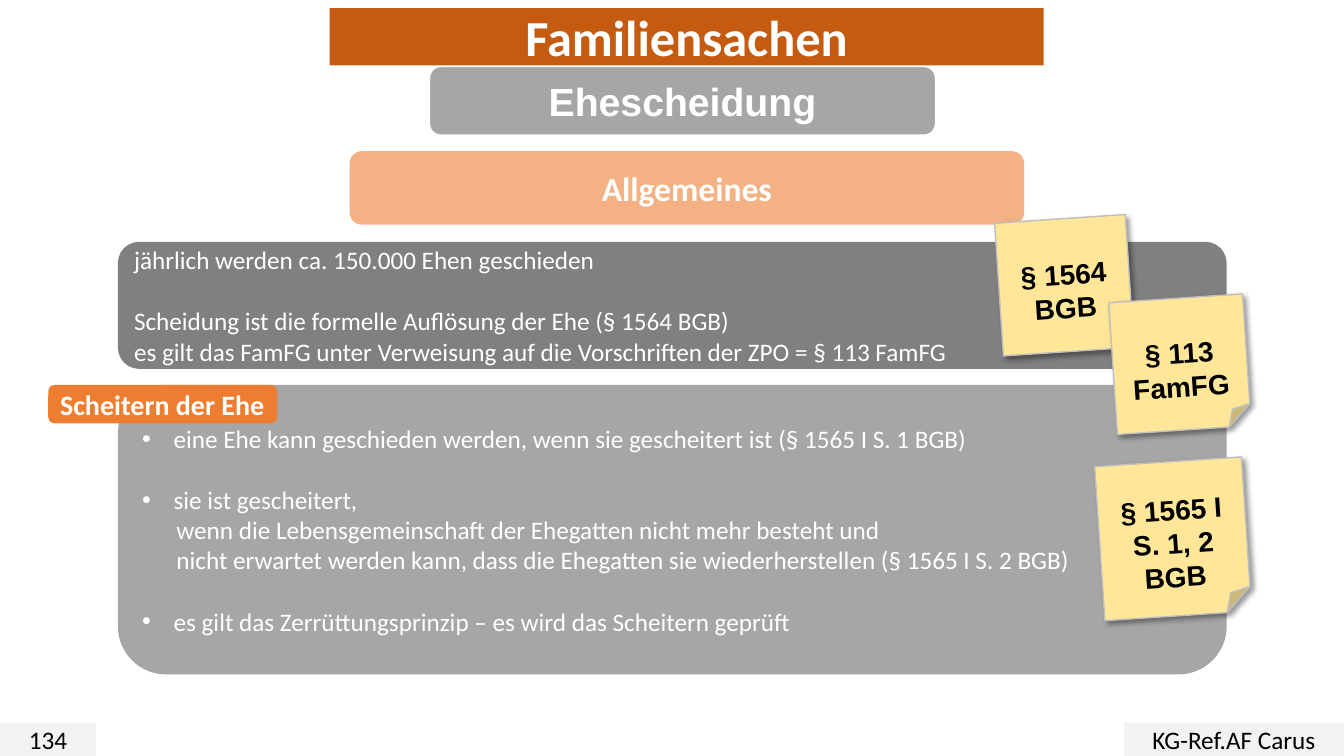
from pptx import Presentation
from pptx.dml.color import RGBColor
from pptx.enum.shapes import MSO_SHAPE
from pptx.enum.text import MSO_ANCHOR, MSO_AUTO_SIZE, PP_ALIGN
from pptx.oxml import parse_xml
from pptx.oxml.ns import nsdecls, qn
from pptx.util import Pt

# Content: places are left, top, width, height in points
TITLE = ("Familiensachen", (235.5, 5.75, 510, 41), "C55A11")
SUBTITLE = ("Ehescheidung", (306.75, 47.5, 361.5, 49), "A6A6A6")
TOPIC = ("Allgemeines", (249.75, 108, 481.75, 52.5), "F4B183")
TAG = ("Scheitern der Ehe", (34.5, 275, 163.5, 27.5), "ED7D31")
FOOTERS = [
    ("134", (0, 516.25, 68.5, 23.75)),
    ("KG-Ref.AF Carus", (802.75, 516.25, 157.25, 23.75)),
]

# Lines: text, kind, gap before
FACTS_PLACE = (84.25, 172.75, 792, 90.75)
FACTS = [
    ("jährlich werden ca. 150.000 Ehen geschieden", "plain", False),
    ("Scheidung ist die formelle Auflösung der Ehe (§ 1564 BGB)", "plain", True),
    ("es gilt das FamFG unter Verweisung auf die Vorschriften der ZPO = § 113 FamFG",
     "plain", False),
]
FAILURE_PLACE = (84.25, 275, 792, 206.75)
FAILURE = [
    ("eine Ehe kann geschieden werden, wenn sie gescheitert ist (§ 1565 I S. 1 BGB)",
     "bullet", False),
    ("sie ist gescheitert,", "bullet", True),
    ("wenn die Lebensgemeinschaft der Ehegatten nicht mehr besteht und",
     "follow", False),
    ("nicht erwartet werden kann, dass die Ehegatten sie wiederherstellen (§ 1565 I S. 2 BGB)",
     "follow", False),
    ("es gilt das Zerrüttungsprinzip – es wird das Scheitern geprüft", "bullet", True),
]
INDENTS = {"plain": (0, 0), "bullet": (22.5, -22.5), "follow": (24.5, 0)}

NOTES = [
    (["§ 1564", "BGB"], (713.5, 156.25, 93.5, 95)),
    (["§ 113", "FamFG"], (795, 213, 95.75, 94.25)),
    (["§ 1565 I S. 1, 2", "BGB"], (785.5, 329.75, 105, 110.25)),
]
NOTE_TURN = 356.2
WHITE, BLACK = "FFFFFF", "000000"
LINE_GAP = 22


def color(code):
    return RGBColor.from_string(code)


def place_box(box, place):
    box.left, box.top, box.width, box.height = [Pt(value) for value in place]


def dress(box, fill, line=None):
    box.fill.solid()
    box.fill.fore_color.rgb = color(fill)
    if line:
        box.line.color.rgb = color(line)
        box.line.width = Pt(1)
    else:
        box.line.fill.background()
    frame = box.text_frame
    frame.word_wrap = True
    frame.auto_size = MSO_AUTO_SIZE.NONE
    frame.vertical_anchor = MSO_ANCHOR.MIDDLE
    frame.margin_left = frame.margin_right = Pt(7.2)
    frame.margin_top = frame.margin_bottom = Pt(3.6)


def add_box(page, kind, place, fill, line=None):
    box = page.shapes.add_shape(kind, *[Pt(value) for value in place])
    box.shadow.inherit = False
    dress(box, fill, line)
    return box


def round_placeholder(box, place, fill):
    place_box(box, place)
    box.element.spPr.append(parse_xml(
        f'<a:prstGeom {nsdecls("a")} prst="roundRect"><a:avLst/></a:prstGeom>'))
    dress(box, fill)


def write(box, lines, size, ink=WHITE, font="Calibri", bold=False,
          align=PP_ALIGN.CENTER):
    frame = box.text_frame
    for number, line in enumerate(lines):
        para = frame.add_paragraph() if number else frame.paragraphs[0]
        para.alignment = align
        para.space_before = para.space_after = Pt(0)
        span = para.add_run()
        span.text = line
        span.font.name = font
        span.font.size = Pt(size)
        span.font.bold = bold
        span.font.color.rgb = color(ink)


def write_list(box, rows):
    write(box, [text for text, _, _ in rows], 18, align=PP_ALIGN.LEFT)
    for para, (_, kind, gap) in zip(box.text_frame.paragraphs, rows):
        para.space_before = Pt(LINE_GAP if gap else 0)
        margin, indent = INDENTS[kind]
        settings = para._p.get_or_add_pPr()
        settings.set("marL", str(Pt(margin)))
        settings.set("indent", str(Pt(indent)))
        if kind == "bullet":
            settings.append(parse_xml(f'<a:buFont {nsdecls("a")} typeface="Arial"/>'))
            settings.append(parse_xml(f'<a:buChar {nsdecls("a")} char="•"/>'))
        else:
            settings.append(parse_xml(f'<a:buNone {nsdecls("a")}/>'))


def add_note(page, lines, place):
    note = add_box(page, MSO_SHAPE.FOLDED_CORNER, place, "FFE699", "BFBFBF")
    note.rotation = NOTE_TURN
    note.text_frame.margin_top = Pt(26.5)
    write(note, lines, 20, BLACK, "Arial", True)
    note.element.spPr.find(qn("a:effectLst")).append(parse_xml(
        f'<a:outerShdw {nsdecls("a")} blurRad="{Pt(4)}" dist="{Pt(3)}" dir="2700000">'
        f'<a:srgbClr val="{BLACK}"><a:alpha val="40000"/></a:srgbClr></a:outerShdw>'))


def main():
    deck = Presentation()
    deck.slide_width, deck.slide_height = Pt(960), Pt(540)
    page = deck.slides.add_slide(deck.slide_layouts[1])
    rounded = MSO_SHAPE.ROUNDED_RECTANGLE

    # Title
    text, place, fill = TITLE
    title = page.shapes.title
    round_placeholder(title, place, fill)
    write(title, [text], 36, bold=True)

    # Footer fields
    for text, place in FOOTERS:
        write(add_box(page, MSO_SHAPE.RECTANGLE, place, "F2F2F2"), [text], 18, BLACK)

    # Subtitle and topic bars
    text, place, fill = SUBTITLE
    write(add_box(page, rounded, place, fill, WHITE), [text], 28,
          font="Arial", bold=True)
    text, place, fill = TOPIC
    write(add_box(page, rounded, place, fill), [text], 24, bold=True)

    # Facts panel and bullet list
    write_list(add_box(page, rounded, FACTS_PLACE, "808080"), FACTS)
    body = page.placeholders[1]
    round_placeholder(body, FAILURE_PLACE, "A6A6A6")
    write_list(body, FAILURE)

    # Tag on the list
    text, place, fill = TAG
    tag = add_box(page, rounded, place, fill)
    tag.text_frame.margin_right = Pt(0)
    write(tag, [text], 20, bold=True, align=PP_ALIGN.LEFT)

    # Sticky notes
    for lines, place in NOTES:
        add_note(page, lines, place)

    deck.save("out.pptx")


if __name__ == "__main__":
    main()
